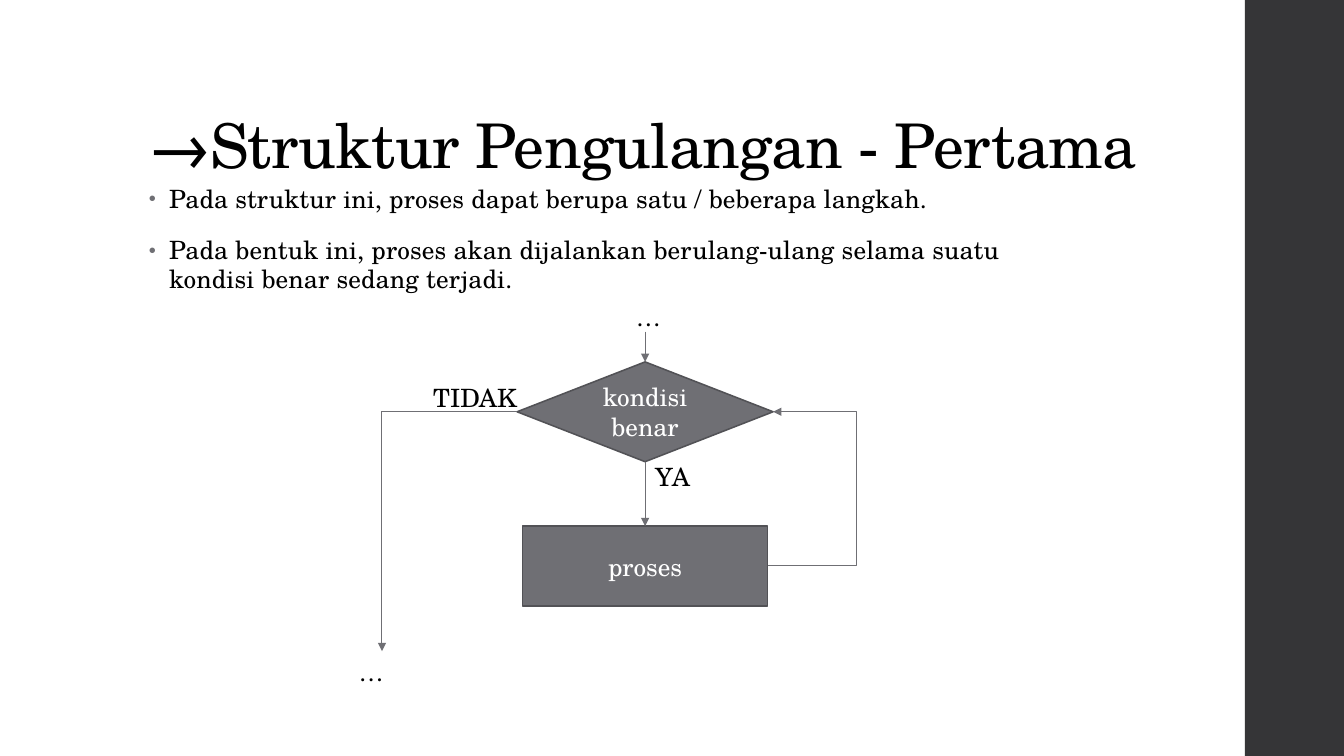
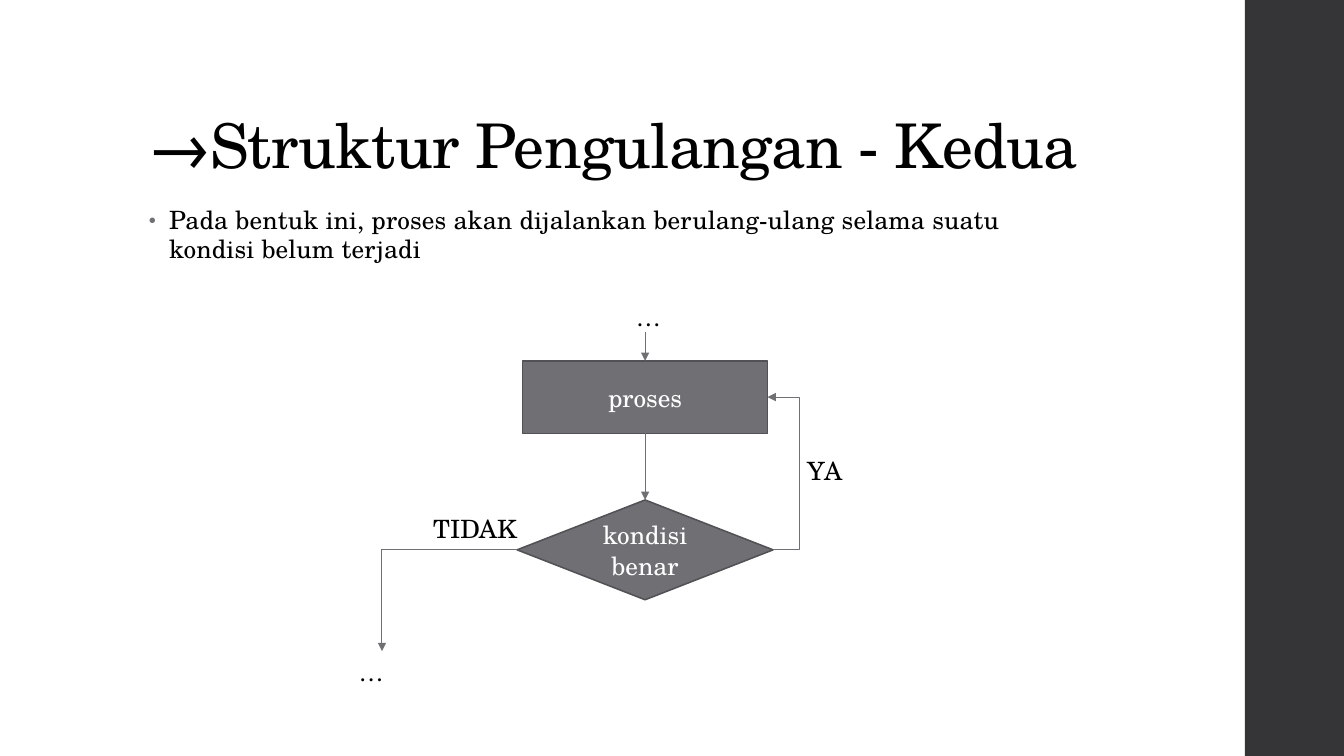
from pptx import Presentation
from pptx.dml.color import RGBColor
from pptx.enum.shapes import MSO_CONNECTOR as Link, MSO_SHAPE as Shape
from pptx.enum.text import MSO_ANCHOR as Anchor, MSO_AUTO_SIZE as AutoSize, PP_ALIGN as Align
from pptx.oxml.ns import qn
from pptx.util import Inches, Pt
from lxml.etree import SubElement

# Shared style
BLACK = RGBColor(0x00, 0x00, 0x00)
WHITE = RGBColor(0xFF, 0xFF, 0xFF)
GRAY = RGBColor(0x6F, 0x6F, 0x74)
EDGE = RGBColor(0x52, 0x52, 0x56)
DARK = RGBColor(0x35, 0x35, 0x37)
FONT = "TeX Gyre Schola"
TITLE_SIZE, TEXT_SIZE = 44, 18

# Grid: ten columns and ten rows to the inch
CELL = Inches(0.1)
COLUMNS, ROWS = 133.33, 75
MARGIN = 13.8
AXIS = 64          # centre column of the flow
EXIT = 37.9        # column of the way out
FLOW_TOP, FLOW_END = 32.9, 64.6
DIAMOND_SIZE = (25.4, 9.9)
PROCESS_WIDTH = 24.3

# Connection sites of rectangles and diamonds
TOP, LEFT, BOTTOM, RIGHT = range(4)


def grid(*cells):
    return [round(cell * CELL) for cell in cells]


class Deck:
    """Holds the style and the slide being drawn."""

    def __init__(self):
        self.prs = Presentation()
        self.prs.slide_width, self.prs.slide_height = grid(COLUMNS, ROWS)
        self.slide = None

    def new_slide(self, heading):
        self.slide = self.prs.slides.add_slide(self.prs.slide_layouts[5])
        band = self.slide.shapes.add_shape(Shape.RECTANGLE, *grid(123.5, 0, COLUMNS - 123.5, ROWS))
        band.shadow.inherit = False
        band.fill.solid()
        band.fill.fore_color.rgb = DARK
        band.line.fill.background()

        title = self.slide.shapes.title
        title.left, title.top, title.width, title.height = grid(MARGIN, 4, 106, 14.5)
        frame = title.text_frame
        frame.auto_size = AutoSize.NONE
        frame.word_wrap = True
        frame.vertical_anchor = Anchor.BOTTOM
        paragraph = frame.paragraphs[0]
        paragraph.alignment = Align.LEFT
        paragraph.line_spacing = 0.9
        self.run(paragraph, heading, BLACK, TITLE_SIZE, -0.5)

    def run(self, paragraph, text, color=BLACK, size=TEXT_SIZE, tracking=0):
        run = paragraph.add_run()
        run.text = text
        run.font.name = FONT
        run.font.size = Pt(size)
        run.font.color.rgb = color
        if tracking:
            run.font._element.set("spc", str(round(tracking * 100)))

    def text_frame(self, left, top, width, height):
        frame = self.slide.shapes.add_textbox(*grid(left, top, width, height)).text_frame
        frame.word_wrap = True
        return frame

    def bullets(self, top, *points):
        frame = self.text_frame(MARGIN, top, 94, 12.9)
        for number, point in enumerate(points):
            paragraph = frame.add_paragraph() if number else frame.paragraphs[0]
            paragraph.line_spacing = 0.95
            if number:
                paragraph.space_before = Pt(14)
            paragraph.space_after = Pt(2)
            props = paragraph._p.get_or_add_pPr()
            props.set("marL", str(Inches(0.2)))
            props.set("indent", str(-Inches(0.2)))
            color = SubElement(props, qn("a:buClr"))
            SubElement(color, qn("a:srgbClr")).set("val", str(GRAY))
            SubElement(props, qn("a:buSzPct")).set("val", "80000")
            SubElement(props, qn("a:buFont")).set("typeface", "Arial")
            SubElement(props, qn("a:buChar")).set("char", "•")
            self.run(paragraph, point, tracking=0.1)

    def label(self, text, left, top, width=13.4):
        self.run(self.text_frame(left, top, width, 4).paragraphs[0], text)

    def node(self, kind, text, top, width, height):
        """Add a flow step centred on the axis."""
        step = self.slide.shapes.add_shape(kind, *grid(AXIS - width / 2, top, width, height))
        step.shadow.inherit = False
        step.fill.solid()
        step.fill.fore_color.rgb = GRAY
        step.line.color.rgb = EDGE
        step.line.width = Pt(1.1)
        frame = step.text_frame
        frame.word_wrap = True
        frame.vertical_anchor = Anchor.MIDDLE
        frame.paragraphs[0].alignment = Align.CENTER
        self.run(frame.paragraphs[0], text, WHITE)
        return step

    def condition(self, top):
        return self.node(Shape.DIAMOND, "kondisi benar", top, *DIAMOND_SIZE)

    def process(self, top, height):
        return self.node(Shape.RECTANGLE, "proses", top, PROCESS_WIDTH, height)

    def arrow(self, kind, start=None, end=None, begin_at=(0, 0), end_at=(0, 0)):
        """Join (step, site) pairs; an end without a step takes a grid point."""
        link = self.slide.shapes.add_connector(kind, *grid(*begin_at, *end_at))
        if start:
            link.begin_connect(*start)
        if end:
            link.end_connect(*end)
        link.line.color.rgb = GRAY
        link.line.width = Pt(0.75)
        SubElement(link.line._get_or_add_ln(), qn("a:tailEnd")).set("type", "triangle")
        SubElement(link._element.spPr, qn("a:effectLst"))
        return link

    def loop_back(self, start, end, column):
        """Run out to a column on the right and return to an earlier step."""
        link = self.arrow(Link.ELBOW, (start, RIGHT), (end, RIGHT))
        share = (column * CELL - link.begin_x) / (link.end_x - link.begin_x)
        guide = SubElement(link._element.spPr.prstGeom.get_or_add_avLst(), qn("a:gd"))
        guide.set("name", "adj1")
        guide.set("fmla", f"val {round(share * 100000)}")

    def flow(self, first, second, decision):
        """Draw the entry, the step between, and the way out."""
        self.arrow(Link.STRAIGHT, end=(first, TOP), begin_at=(AXIS, FLOW_TOP))
        self.arrow(Link.STRAIGHT, (first, BOTTOM), (second, TOP))
        way_out = self.arrow(Link.ELBOW, (decision, LEFT), end_at=(EXIT, FLOW_END))
        way_out._element.spPr.prstGeom.set("prst", "bentConnector2")
        self.label("…", 62.1, 29.4, 6.6)
        self.label("…", 34.6, FLOW_END, 6.6)


def main():
    deck = Deck()

    # Condition tested before the process
    deck.new_slide("→Struktur Pengulangan - Pertama")
    deck.bullets(
        17.9,
        "Pada struktur ini, proses dapat berupa satu / beberapa langkah.",
        "Pada bentuk ini, proses akan dijalankan berulang-ulang selama suatu "
        "kondisi benar sedang terjadi.",
    )
    condition = deck.condition(35.9)
    process = deck.process(52.2, 7.9)
    deck.flow(condition, process, decision=condition)
    deck.loop_back(process, condition, 85)
    deck.label("YA", AXIS, 45.3)
    deck.label("TIDAK", 42, 37.4)

    # Condition tested after the process
    deck.new_slide("→Struktur Pengulangan - Kedua")
    deck.bullets(
        20,
        "Pada bentuk ini, proses akan dijalankan berulang-ulang selama suatu "
        "kondisi belum terjadi",
    )
    process = deck.process(35.8, 7.2)
    condition = deck.condition(49.6)
    deck.flow(process, condition, decision=condition)
    deck.loop_back(condition, process, 79.3)
    deck.label("YA", 79.1, 44.7)
    deck.label("TIDAK", 42, 50.4)

    deck.prs.save("out.pptx")


if __name__ == "__main__":
    main()
